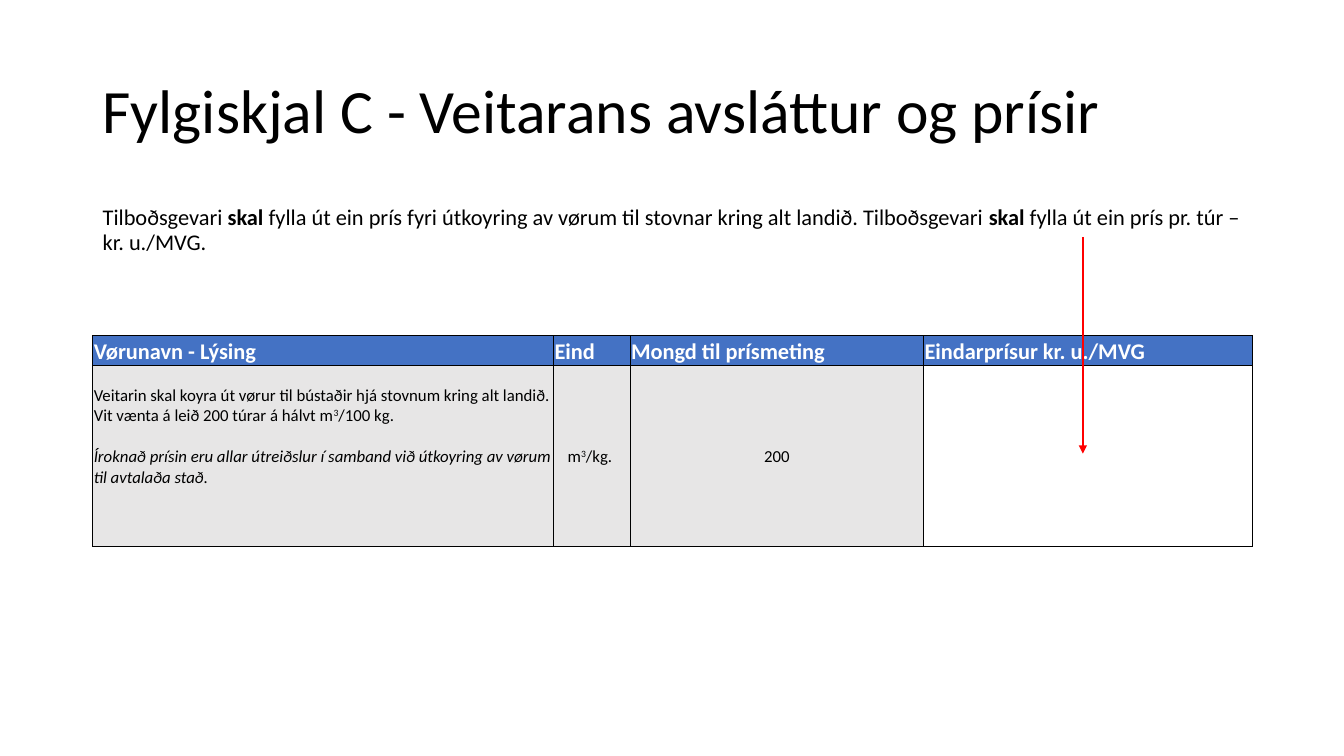
from pptx import Presentation
from pptx.dml.color import RGBColor
from pptx.enum.shapes import MSO_CONNECTOR as Connector
from pptx.enum.text import MSO_ANCHOR as Anchor, PP_ALIGN as Align
from pptx.oxml.ns import qn
from pptx.util import Inches, Pt
from lxml.etree import SubElement

THEME = {
    "font": "Calibri",
    "title": 44, "body": 16, "cell": 12,
    "black": "000000", "white": "FFFFFF",
    "header": "4472C4", "shade": "E7E6E6", "arrow": "FF0000",
}

TITLE = [("Fylgiskjal C - Veitarans avsláttur og prísir", "")]
INTRO = [
    ("Tilboðsgevari ", ""),
    ("skal ", "bold"),
    ("fylla út ein prís fyri útkoyring av vørum til stovnar kring alt landið. Tilboðsgevari ", ""),
    ("skal ", "bold"),
    ("fylla út ein prís pr. túr – kr. u./MVG.", ""),
]
HEADERS = ["Vørunavn - Lýsing", "Eind", "Mongd til prísmeting", "Eindarprísur kr. u./MVG"]
DESCRIPTION = [
    [
        ("Veitarin skal koyra út vørur til bústaðir hjá stovnum kring alt landið. "
         "Vit vænta á leið 200 túrar á hálvt m", ""),
        ("3", "super"),
        ("/100 kg. ", ""),
    ],
    [("Íroknað prísin eru allar útreiðslur í samband við útkoyring av vørum til avtalaða stað. ", "italic")],
]
UNIT = [[("m", ""), ("3", "super"), ("/kg. ", "")]]
AMOUNT = [[("200", "")]]

LEFT, WIDTH = 0.92, 11.5
TABLE_TOP = 3.33
COLUMNS = [4.57, 0.76, 2.91, 3.26]
ROWS = [0.3, 1.79]
ARROW_X, ARROW_TOP, ARROW_BOTTOM = 10.74, 2.35, 4.5


def color(name):
    return RGBColor.from_string(THEME[name])


def write_spans(para, spans, size, ink="black"):
    for text, style in spans:
        span = para.add_run()
        span.text = text
        font = span.font
        font.name = THEME["font"]
        font.size = Pt(THEME[size])
        font.color.rgb = color(ink)
        font.bold = style == "bold"
        font.italic = style == "italic"
        if style == "super":
            span._r.get_or_add_rPr().set("baseline", "30000")


def add_text(page, top, height, spans, size, anchor):
    box = page.shapes.add_textbox(Inches(LEFT), Inches(top), Inches(WIDTH), Inches(height))
    frame = box.text_frame
    frame.word_wrap = True
    frame.vertical_anchor = anchor
    para = frame.paragraphs[0]
    para.line_spacing = 0.9
    write_spans(para, spans, size)


def set_borders(cell, column):
    last = len(COLUMNS) - 1
    widths = {
        "a:lnL": 1 if column == 0 else 0.5,
        "a:lnR": 1 if column == last else 0.5,
        "a:lnT": 1,
        "a:lnB": 1,
    }
    properties = cell._tc.get_or_add_tcPr()
    for position, (side, width) in enumerate(widths.items()):
        line = SubElement(properties, qn(side), w=str(Pt(width)))
        fill = SubElement(line, qn("a:solidFill"))
        SubElement(fill, qn("a:srgbClr"), val=THEME["black"])
        properties.remove(line)
        properties.insert(position, line)


def fill_cell(cell, column, paragraphs, size, ink, fill, anchor, align):
    cell.margin_left = cell.margin_right = cell.margin_top = Inches(0.01)
    cell.margin_bottom = 0
    cell.vertical_anchor = anchor
    if fill:
        cell.fill.solid()
        cell.fill.fore_color.rgb = color(fill)
    else:
        cell.fill.background()
    for index, spans in enumerate(paragraphs):
        para = cell.text_frame.add_paragraph() if index else cell.text_frame.paragraphs[0]
        para.alignment = align
        if index:
            para.space_before = Pt(14.65)
        write_spans(para, spans, size, ink)
    set_borders(cell, column)


def add_price_table(page):
    frame = page.shapes.add_table(
        len(ROWS), len(COLUMNS), Inches(LEFT), Inches(TABLE_TOP), Inches(WIDTH), Inches(sum(ROWS)))
    table = frame.table
    table.first_row = table.horz_banding = False
    for column, width in zip(table.columns, COLUMNS):
        column.width = Inches(width)
    for row, height in zip(table.rows, ROWS):
        row.height = Inches(height)
    for column, header in enumerate(HEADERS):
        fill_cell(table.cell(0, column), column, [[(header, "bold")]],
                  "body", "white", "header", Anchor.BOTTOM, Align.LEFT)
    for column, content in enumerate([DESCRIPTION, UNIT, AMOUNT, []]):
        fill_cell(table.cell(1, column), column, content, "cell", "black",
                  "shade" if content else None, Anchor.MIDDLE,
                  Align.CENTER if column else Align.LEFT)
    table.cell(1, 0).margin_bottom = Inches(0.4)


def add_arrow(page):
    arrow = page.shapes.add_connector(
        Connector.STRAIGHT, Inches(ARROW_X), Inches(ARROW_TOP), Inches(ARROW_X), Inches(ARROW_BOTTOM))
    arrow.line.color.rgb = color("arrow")
    arrow.line.width = Pt(1.5)
    SubElement(arrow.line._get_or_add_ln(), qn("a:tailEnd"), type="triangle")
    SubElement(arrow._element.spPr, qn("a:effectLst"))


def main():
    deck = Presentation()
    deck.slide_width, deck.slide_height = Inches(13.33), Inches(7.5)
    page = deck.slides.add_slide(deck.slide_layouts[6])
    add_text(page, 0.4, 1.45, TITLE, "title", Anchor.MIDDLE)
    add_text(page, 2, 4.34, INTRO, "body", Anchor.TOP)
    add_price_table(page)
    add_arrow(page)
    deck.save("out.pptx")


if __name__ == "__main__":
    main()
